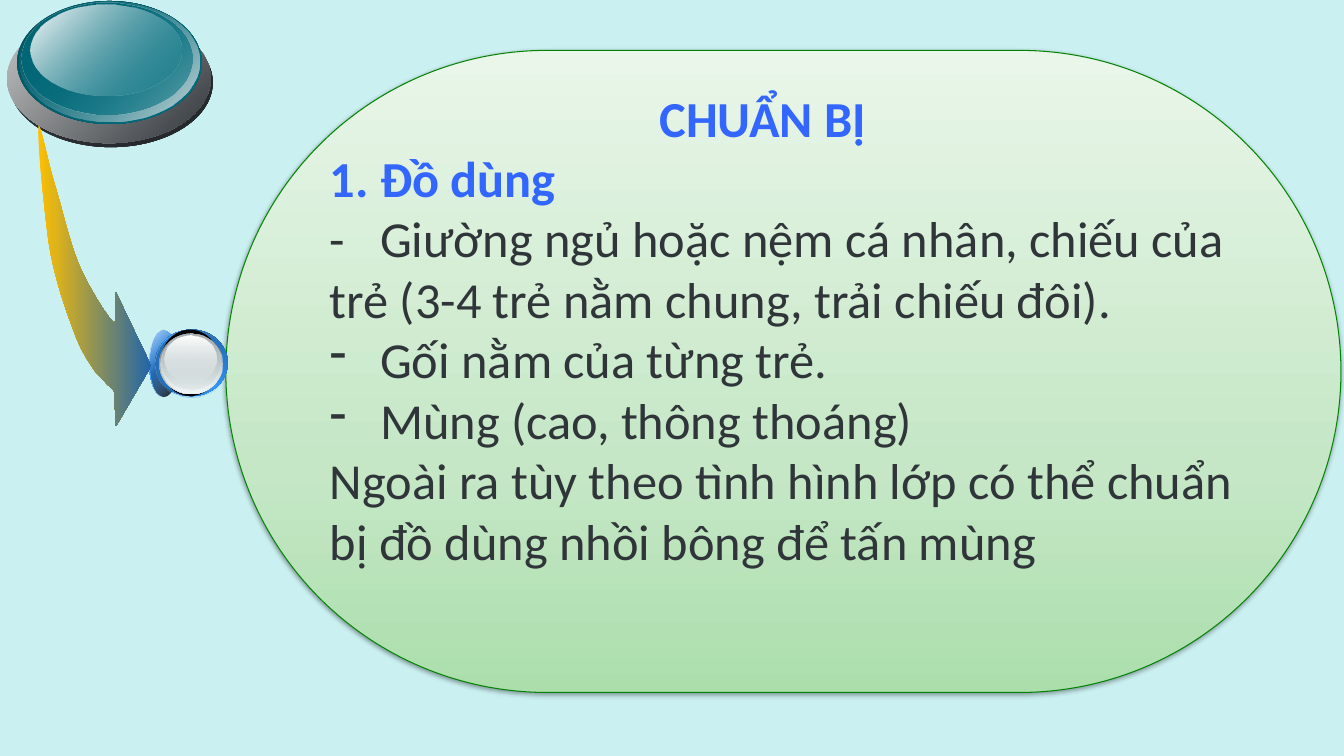
from dataclasses import dataclass
from typing import NamedTuple

from lxml.etree import SubElement
from pptx import Presentation
from pptx.dml.color import RGBColor
from pptx.enum.shapes import MSO_SHAPE
from pptx.oxml.ns import qn
from pptx.util import Pt

PX = 9144  # EMU in one px, 100 px to the inch


@dataclass(frozen=True)
class Theme:
    background: str = "CBF0F1"
    heading: str = "3366FF"
    body: str = "30353A"
    panel_line: str = "048306"
    font: str = "Calibri"
    size: int = 36


class Stop(NamedTuple):
    position: int
    color: str
    opacity: int = 100


class Oval(NamedTuple):
    box: tuple[int, int, int, int]
    stops: list[Stop]
    angle: int = 45


class Line(NamedTuple):
    text: str
    heading: bool = False
    indent: int = 0
    bullet: bool = False
    tab: int = 0


THEME = Theme()

DISC = [
    Oval((9, 18, 202, 128), [Stop(0, "30353A"), Stop(100, "23272A")]),
    Oval((7, 14, 202, 128), [Stop(0, "C7C8C8"), Stop(100, "30353A")]),
    Oval((17, 1, 183, 122), [Stop(0, "01515D"), Stop(100, "027182")]),
    Oval((19, 2, 179, 119), [Stop(0, "027182", 0), Stop(100, "D4DBDE")]),
    Oval((21, 3, 170, 111), [Stop(0, "026675"), Stop(100, "027182", 48)]),
    Oval((30, 5, 150, 90), [Stop(0, "FFFFFF"), Stop(100, "027182", 38)]),
]
BUTTON = [
    Oval((148, 328, 28, 66), [Stop(0, "FFFFFF"), Stop(50, "3399FF"), Stop(100, "FFFFFF")]),
    Oval((148, 327, 28, 66), [Stop(0, "3399FF", 32), Stop(100, "000000", 90)]),
    Oval((154, 327, 72, 66), [Stop(0, "1C538A"), Stop(50, "3399FF"), Stop(100, "1C538A")], 315),
    Oval((154, 328, 72, 66), [Stop(0, "2061A2"), Stop(100, "3399FF", 0)]),
    Oval((159, 327, 59, 66), [Stop(0, "000000")]),
    Oval((158, 331, 63, 60), [Stop(0, "636869"), Stop(100, "D6E1E2")], 90),
    Oval((159, 331, 62, 59), [Stop(0, "D6E1E2", 0), Stop(100, "F1F5F5")], 90),
    Oval((160, 331, 59, 55), [Stop(0, "AAB2B3"), Stop(100, "D6E1E2", 48)], 90),
    Oval((163, 333, 52, 45), [Stop(0, "FFFFFF"), Stop(100, "D6E1E2", 38)], 90),
]
PANEL_BOX = (224, 50, 1106, 637)
PANEL_STOPS = [Stop(0, "ACDEAC"), Stop(35, "C5E7C6"), Stop(100, "E9F6E9")]
TEXT_BOX = (327, 86, 901, 480)
LINES = [
    Line("CHUẨN BỊ", heading=True, indent=327),
    Line("1. Đồ dùng", heading=True),
    Line("-\tGiường ngủ hoặc nệm cá nhân, chiếu của trẻ (3-4 trẻ nằm chung, trải chiếu đôi).", tab=61),
    Line("Gối nằm của từng trẻ.", indent=50, bullet=True),
    Line("Mùng (cao, thông thoáng)", indent=50, bullet=True),
    Line("Ngoài ra tùy theo tình hình lớp có thể chuẩn bị đồ dùng nhồi bông để tấn mùng"),
]

# Each step is one end point (straight) or two handles and an end point (curve).
ARROW_START = (38, 128)
ARROW_STEPS = [
    [(37, 138), (44, 212), (49, 245)],
    [(55, 279), (65, 307), (73, 328)],
    [(80, 348), (88, 359), (94, 368)],
    [(107, 382)], [(113, 387)], [(115, 423)], [(150, 363)], [(115, 290)], [(114, 321)],
    [(108, 317), (89, 287), (79, 264)],
    [(69, 241), (61, 204), (54, 182)],
    [(47, 159), (38, 112), (38, 128)],
]
ARROW_STOPS = [Stop(0, "FFC000"), Stop(100, "2165AA")]


def rgb(color: str) -> RGBColor:
    return RGBColor.from_string(color)


def emu(lengths: tuple) -> list[int]:
    return [round(v * PX) for v in lengths]


def paint(sp, stops: list[Stop], angle: int) -> None:
    """Fill without outline or shadow; the angle runs clockwise."""
    sp.shadow.inherit = False
    sp.line.fill.background()
    if len(stops) == 1:
        sp.fill.solid()
        sp.fill.fore_color.rgb = rgb(stops[0].color)
        return
    sp.fill.gradient()
    sp.fill.gradient_angle = (360 - angle) % 360
    gs_list = next(sp.element.spPr.iter(qn("a:gsLst")))
    for gs in list(gs_list):
        gs_list.remove(gs)
    for stop in stops:
        gs = SubElement(gs_list, qn("a:gs"), pos=str(stop.position * 1000))
        clr = SubElement(gs, qn("a:srgbClr"), val=stop.color)
        if stop.opacity < 100:
            SubElement(clr, qn("a:alpha"), val=str(stop.opacity * 1000))


def add_ovals(shapes, ovals: list[Oval]) -> None:
    for oval in ovals:
        sp = shapes.add_shape(MSO_SHAPE.OVAL, *emu(oval.box))
        paint(sp, oval.stops, oval.angle)


def add_panel(shapes) -> None:
    sp = shapes.add_shape(MSO_SHAPE.ROUNDED_RECTANGLE, *emu(PANEL_BOX))
    sp.adjustments[0] = 0.5
    paint(sp, PANEL_STOPS, 270)
    sp.line.color.rgb = rgb(THEME.panel_line)
    sp.line.width = Pt(0.75)
    effects = sp.element.spPr.find(qn("a:effectLst"))
    shadow = SubElement(effects, qn("a:outerShdw"), blurRad="40000", dist="20000",
                        dir="5400000", rotWithShape="0")
    clr = SubElement(shadow, qn("a:srgbClr"), val="000000")
    SubElement(clr, qn("a:alpha"), val="38000")


def add_text(shapes) -> None:
    tf = shapes.add_textbox(*emu(TEXT_BOX)).text_frame
    tf.word_wrap = True
    tf.margin_left = tf.margin_top = tf.margin_right = tf.margin_bottom = 0
    for i, line in enumerate(LINES):
        p = tf.add_paragraph() if i else tf.paragraphs[0]
        p.text = line.text
        p.font.name = THEME.font
        p.font.size = Pt(THEME.size)
        p.font.bold = line.heading
        p.font.color.rgb = rgb(THEME.heading if line.heading else THEME.body)
        set_indent(p, line)


def set_indent(p, line: Line) -> None:
    props = p._p.get_or_add_pPr()
    props.set("marL", str(line.indent * PX))
    props.set("indent", str(-line.indent * PX if line.bullet else 0))
    def_props = props.find(qn("a:defRPr"))
    if line.bullet:
        def_props.addprevious(SubElement(props, qn("a:buChar"), char="-"))
    if line.tab:
        tabs = SubElement(props, qn("a:tabLst"))
        SubElement(tabs, qn("a:tab"), pos=str(line.tab * PX), algn="l")
        def_props.addprevious(tabs)


def arrow_points(samples: int = 12) -> list[list[int]]:
    """Outline of the arrow in EMU, with its curves sampled evenly."""
    points, last = [], ARROW_START
    for step in ARROW_STEPS:
        if len(step) == 1:
            points.append(emu(step[0]))
        else:
            for k in range(1, samples + 1):
                t = k / samples
                weights = ((1 - t) ** 3, 3 * t * (1 - t) ** 2, 3 * t * t * (1 - t), t ** 3)
                points.append(emu(tuple(
                    sum(w * point[axis] for w, point in zip(weights, [last, *step]))
                    for axis in (0, 1))))
        last = step[-1]
    return points


def add_arrow(shapes) -> None:
    builder = shapes.build_freeform(*emu(ARROW_START), scale=1.0)
    builder.add_line_segments(arrow_points(), close=True)
    paint(builder.convert_to_shape(), ARROW_STOPS, 0)


def main() -> None:
    prs = Presentation()
    prs.slide_width, prs.slide_height = emu((1333, 750))
    s = prs.slides.add_slide(prs.slide_layouts[6])
    s.background.fill.solid()
    s.background.fill.fore_color.rgb = rgb(THEME.background)
    add_ovals(s.shapes, DISC)
    add_panel(s.shapes)
    add_text(s.shapes)
    add_ovals(s.shapes, BUTTON)
    add_arrow(s.shapes)
    prs.save("out.pptx")


if __name__ == "__main__":
    main()
